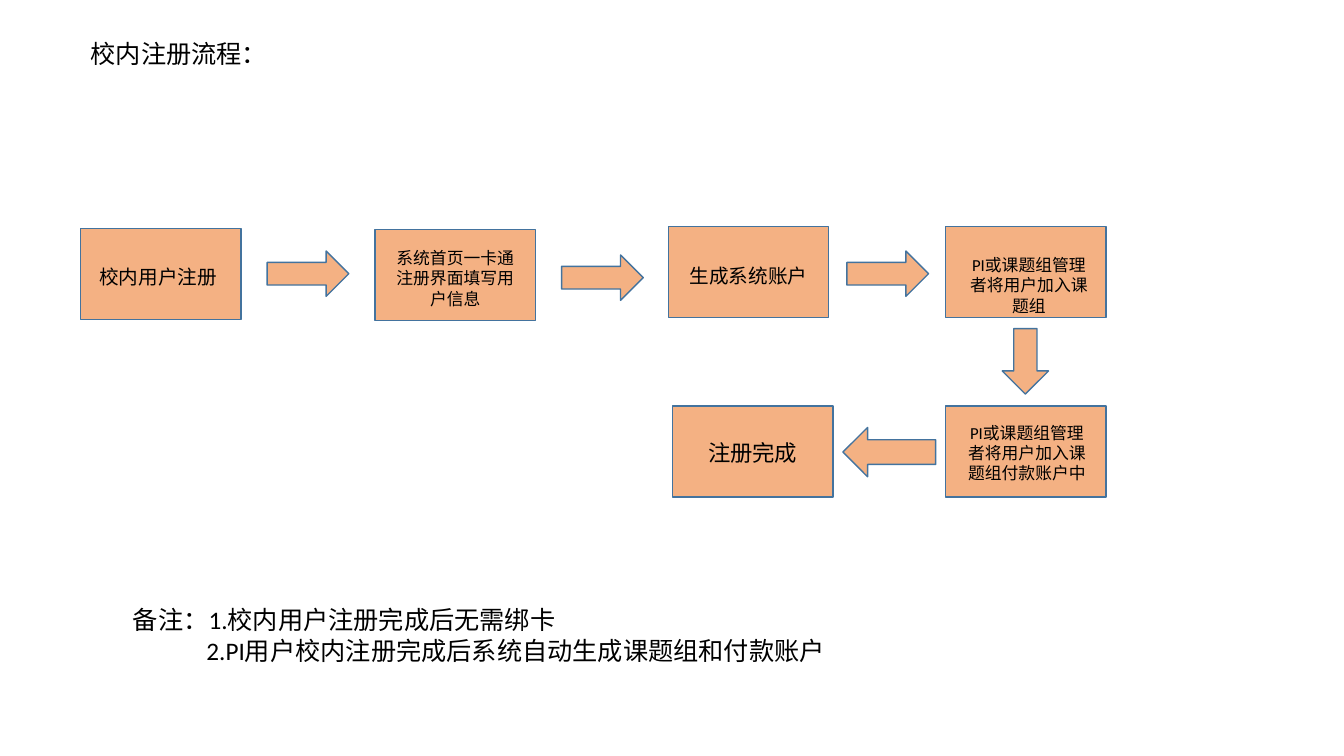
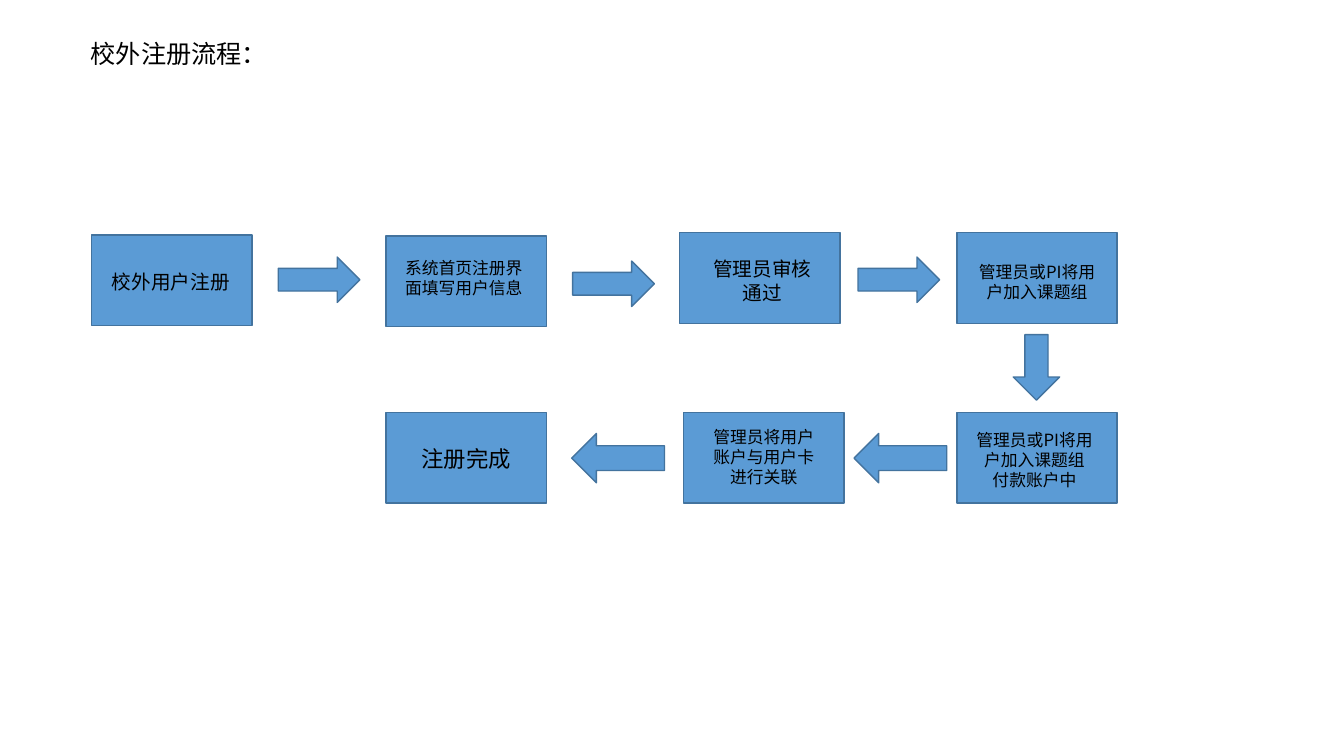
from lxml import etree
from pptx import Presentation
from pptx import util as u
from pptx.dml.color import RGBColor
from pptx.enum import shapes, text
from pptx.oxml.ns import qn

ORANGE = RGBColor(0xF4, 0xB1, 0x83)
BLUE = RGBColor(0x5B, 0x9B, 0xD5)
EDGE = RGBColor(0x43, 0x73, 0x9E)
BLACK = RGBColor(0, 0, 0)
LATIN, CJK = "Calibri", "Noto Sans CJK SC"
LEADING = 1.2

STEP_W, STEP_H = 1.59, 0.9
STOPS = [(0, 0.02), (2.92, 0.03), (5.83, 0), (8.58, 0),
         (8.58, 1.78), (5.87, 1.78), (2.92, 1.78)]
RIGHT = (shapes.MSO_SHAPE.RIGHT_ARROW, 0.81, 0.45)
DOWN = (shapes.MSO_SHAPE.DOWN_ARROW, 0.46, 0.65)
LEFT = (shapes.MSO_SHAPE.LEFT_ARROW, 0.92, 0.49)
ARROWS = [(1.85, 0.24, RIGHT), (4.77, 0.28, RIGHT), (7.6, 0.24, RIGHT),
          (9.14, 1.01, DOWN), (7.56, 1.99, LEFT), (4.76, 1.99, LEFT)]

INSIDE = [
    ("校内用户注册", 14, 0.06, 0.31, 1.42),
    ("系统首页一卡通注册界面填写用户信息", 12, 0.07, 0.13, 1.45),
    ("生成系统账户", 14, 0.09, 0.32, 1.41),
    ("PI或课题组管理者将用户加入课题组", 12, 0.1, 0.23, 1.45),
    ("PI或课题组管理者将用户加入课题组付款账户中", 12, 0.1, 0.11, 1.41),
    ("注册完成", 16, 0.14, 0.28, 1.31),
]
OUTSIDE = [
    ("校外用户注册", 14, 0.07, 0.3, 1.43),
    ("系统首页注册界面填写用户信息", 12, 0.08, 0.17, 1.38),
    ("管理员审核通过", 14, 0.17, 0.19, 1.3),
    ("管理员或PI将用户加入课题组", 12, 0.1, 0.24, 1.39),
    ("管理员或PI将用户加入课题组付款账户中", 12, 0.09, 0.12, 1.36),
    ("管理员将用户账户与用户卡进行关联", 12, 0.14, 0.09, 1.31),
    ("注册完成", 16, 0.14, 0.28, 1.31),
]
NOTES = ["备注：1.校内用户注册完成后无需绑卡",
         "2.PI用户校内注册完成后系统自动生成课题组和付款账户"]


def inches(*values):
    """Convert numbers to inch lengths."""
    return [u.Inches(v) for v in values]


def style(tf, size, align, latin=LATIN):
    """Format every paragraph of a top-anchored, wrapping text frame."""
    tf.word_wrap = True
    tf.vertical_anchor = text.MSO_ANCHOR.TOP
    for p in tf.paragraphs:
        p.alignment = align
        p.line_spacing = u.Pt(size * LEADING)
        for r in p.runs:
            r.font.size = u.Pt(size)
            r.font.name = latin
            r.font.color.rgb = BLACK
            ea = etree.Element(qn("a:ea"), typeface=CJK)
            r.font._element.find(qn("a:latin")).addnext(ea)


def add_block(s, kind, box, fill):
    """Add a filled, outlined preset shape."""
    sp = s.shapes.add_shape(kind, *inches(*box))
    sp.shadow.inherit = False
    sp.fill.solid()
    sp.fill.fore_color.rgb = fill
    sp.line.color.rgb = EDGE
    sp.line.width = u.Pt(1)
    return sp


def add_step(s, x, y, step, fill, latin):
    """Add one labelled step, its label set in by the given offsets."""
    label, size, dx, dy, width = step
    sp = add_block(s, shapes.MSO_SHAPE.RECTANGLE, (x, y, STEP_W, STEP_H), fill)
    tf = sp.text_frame
    tf.text = label
    tf.margin_left, tf.margin_top, tf.margin_right, tf.margin_bottom = inches(
        dx + 0.1, dy + 0.05, STEP_W - dx - width + 0.1, 0)
    style(tf, size, text.PP_ALIGN.CENTER, latin)


def add_flow(s, left, top, steps, fill, latin):
    """Place the steps along the stops, with an arrow between neighbours."""
    for (x, y), step in zip(STOPS, steps):
        add_step(s, left + x, top + y, step, fill, latin)
    for x, y, (kind, w, h) in ARROWS[:len(steps) - 1]:
        add_block(s, kind, (left + x, top + y, w, h), fill)


def add_notes(s, left, top, width, height):
    """Add the remarks, the second one indented under the first."""
    tf = s.shapes.add_textbox(*inches(left, top, width, height)).text_frame
    tf.text = "\n".join(NOTES)
    style(tf, 18, text.PP_ALIGN.LEFT)
    tf.paragraphs[1]._p.get_or_add_pPr().set("marL", str(u.Inches(0.73)))


def add_flow_slide(prs, title, left, top, steps, fill, latin):
    """Add a titled slide with one registration flow."""
    s = prs.slides.add_slide(prs.slide_layouts[5])
    sp = s.shapes.title
    sp.left, sp.top, sp.width, sp.height = inches(0.8, 0.33, 11.45, 0.71)
    sp.text_frame.text = title
    style(sp.text_frame, 18, text.PP_ALIGN.LEFT)
    add_flow(s, left, top, steps, fill, latin)
    return s


def main():
    """Build and save the deck."""
    prs = Presentation()
    prs.slide_width, prs.slide_height = inches(13.33, 7.5)
    s = add_flow_slide(prs, "校内注册流程：", 0.8, 2.25, INSIDE, ORANGE, LATIN)
    add_notes(s, 1.22, 5.95, 9.93, 0.71)
    add_flow_slide(prs, "校外注册流程：", 0.91, 2.31, OUTSIDE, BLUE, CJK)
    prs.save("out.pptx")


if __name__ == "__main__":
    main()
